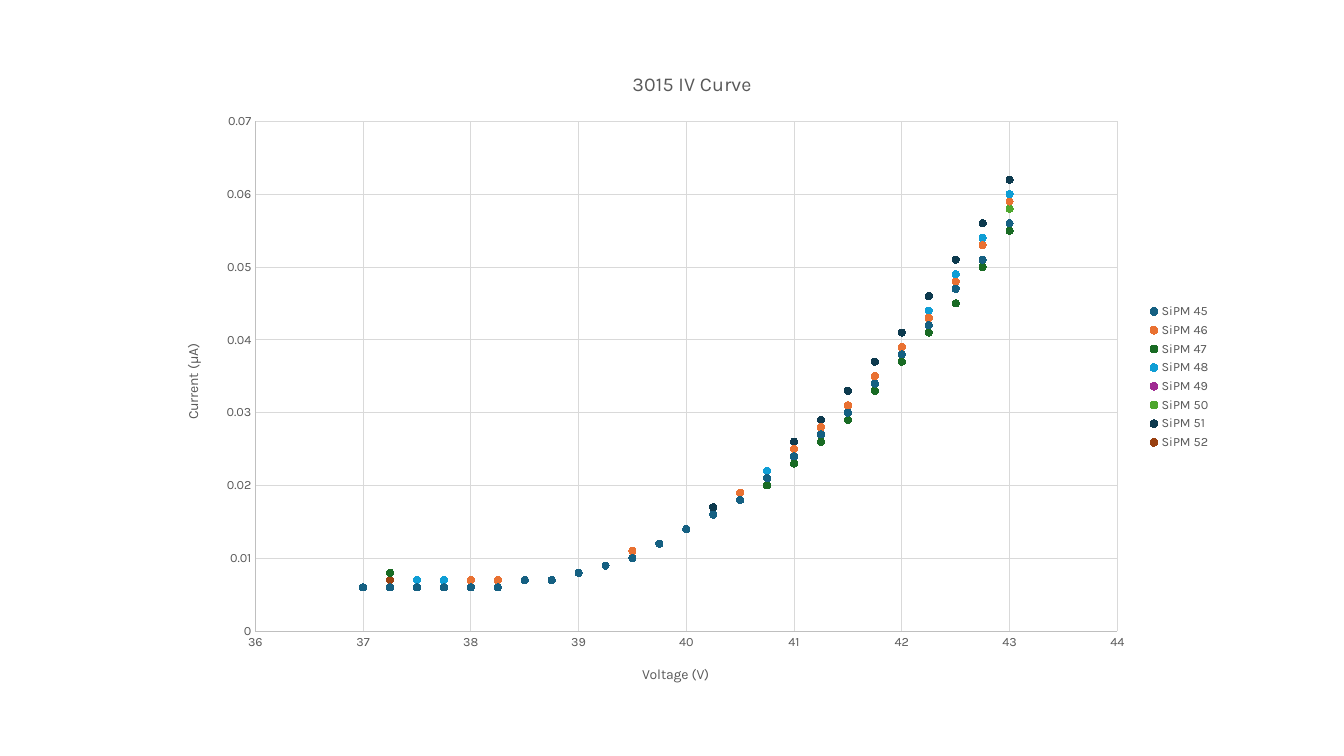
from lxml import etree
from pptx import Presentation
from pptx import util as u
from pptx.chart.data import XyChartData
from pptx.dml.color import RGBColor
from pptx.enum import chart as kinds
from pptx.oxml.ns import qn

FONT = "Karla"
BLACK = RGBColor(0x00, 0x00, 0x00)
TEXT_GREY = RGBColor(0x59, 0x59, 0x59)
AXIS_GREY = RGBColor(0xBF, 0xBF, 0xBF)
GRID_GREY = RGBColor(0xD9, 0xD9, 0xD9)

TITLE = "3015 IV Curve"
AXES = {
    "category": ("Voltage (V)", 36, 44, 1, "0"),
    "value": ("Current (µA)", 0, 0.07, 0.01, "General"),
}
FIRST_VOLTAGE, VOLTAGE_STEP = 37, 0.25
PLOT_AREA = {"x": 0.087, "y": 0.11, "w": 0.815, "h": 0.778}

THOUSANDTHS = [
    ("SiPM 45", RGBColor(0x15, 0x60, 0x82),
     [6, 6, 6, 6, 6, 6, 7, 7, 8, 9, 10, 12, 14, 16, 18, 21, 24, 27, 30, 34, 38, 42, 47, 51, 56]),
    ("SiPM 46", RGBColor(0xE9, 0x71, 0x32),
     [6, 6, 6, 6, 7, 7, 7, 7, 8, 9, 11, 12, 14, 16, 19, 21, 25, 28, 31, 35, 39, 43, 48, 53, 59]),
    ("SiPM 47", RGBColor(0x19, 0x6B, 0x24),
     [6, 8, 6, 6, 7, 7, 7, 7, 8, 9, 10, 12, 14, 16, 18, 20, 23, 26, 29, 33, 37, 41, 45, 50, 55]),
    ("SiPM 48", RGBColor(0x0F, 0x9E, 0xD5),
     [6, 6, 7, 7, 7, 7, 7, 7, 8, 9, 11, 12, 14, 16, 19, 22, 24, 28, 31, 35, 39, 44, 49, 54, 60]),
    ("SiPM 49", RGBColor(0xA0, 0x2B, 0x93),
     [6, 6, 6, 7, 7, 7, 7, 7, 8, 9, 11, 12, 14, 16, 19, 22, 25, 28, 31, 35, 39, 44, 49, 54, 59]),
    ("SiPM 50", RGBColor(0x4E, 0xA7, 0x2E),
     [6, 6, 6, 7, 7, 7, 7, 7, 8, 9, 11, 12, 14, 16, 19, 21, 24, 27, 31, 35, 39, 43, 48, 53, 58]),
    ("SiPM 51", RGBColor(0x0D, 0x3A, 0x4E),
     [6, 6, 6, 7, 7, 7, 7, 7, 8, 9, 11, 12, 14, 17, 19, 22, 26, 29, 33, 37, 41, 46, 51, 56, 62]),
    ("SiPM 52", RGBColor(0x99, 0x40, 0x10),
     [6, 7, 7, 7, 7, 7, 7, 7, 8, 9, 11, 12, 14, 16, 19, 21, 24, 28, 31, 35, 39, 44, 48, 53, 59]),
]


def style_font(font, size, color=TEXT_GREY):
    font.name = FONT
    font.size = u.Pt(size)
    font.bold = False
    font.color.rgb = color


def style_line(line, color):
    line.color.rgb = color
    line.width = u.Pt(0.75)


def write_title(owner, wording, size):
    frame = owner.text_frame
    frame.text = wording
    style_font(frame.paragraphs[0].font, size)


def style_axis(axis, wording, low, high, step, number_format):
    axis.minimum_scale, axis.maximum_scale, axis.major_unit = low, high, step
    axis.has_major_gridlines = True
    axis.major_tick_mark = axis.minor_tick_mark = kinds.XL_TICK_MARK.NONE
    axis.tick_labels.number_format = number_format
    axis.tick_labels.number_format_is_linked = False
    style_font(axis.tick_labels.font, 9)
    style_line(axis.format.line, AXIS_GREY)
    style_line(axis.major_gridlines.format.line, GRID_GREY)
    write_title(axis.axis_title, wording, 10)


def place_plot(chart):
    plot_area = chart.plots[0]._element.getparent()
    layout = plot_area.find(qn("c:layout"))
    if layout is None:
        layout = etree.Element(qn("c:layout"))
        plot_area.insert(0, layout)
    manual = etree.SubElement(layout, qn("c:manualLayout"))
    settings = {"layoutTarget": "inner", "xMode": "edge", "yMode": "edge", **PLOT_AREA}
    for tag, value in settings.items():
        etree.SubElement(manual, qn("c:" + tag)).set("val", str(value))


deck = Presentation()
deck.slide_width, deck.slide_height = u.Inches(13.33), u.Inches(7.5)
page = deck.slides.add_slide(deck.slide_layouts[6])

data = XyChartData()
for name, color, currents in THOUSANDTHS:
    points = data.add_series(name)
    for index, current in enumerate(currents):
        points.add_data_point(FIRST_VOLTAGE + index * VOLTAGE_STEP, current / 1000)

chart = page.shapes.add_chart(
    kinds.XL_CHART_TYPE.XY_SCATTER, u.Inches(1.62), u.Inches(0.49),
    u.Inches(10.49), u.Inches(6.5), data).chart
style_font(chart.font, 10, BLACK)
chart.has_title = True
write_title(chart.chart_title, TITLE, 14)
chart.chart_title.include_in_layout = False
chart.has_legend = True
chart.legend.position = kinds.XL_LEGEND_POSITION.RIGHT
chart.legend.include_in_layout = False
style_font(chart.legend.font, 9)
style_axis(chart.category_axis, *AXES["category"])
style_axis(chart.value_axis, *AXES["value"])
place_plot(chart)

plot = chart.plots[0]
plot.vary_by_categories = False
for series, (name, color, currents) in zip(plot.series, THOUSANDTHS):
    series.smooth = False
    series.format.line.fill.background()
    marker = series.marker
    marker.style = kinds.XL_MARKER_STYLE.CIRCLE
    marker.size = 5
    marker.format.fill.solid()
    marker.format.fill.fore_color.rgb = color
    style_line(marker.format.line, color)

deck.save("out.pptx")
